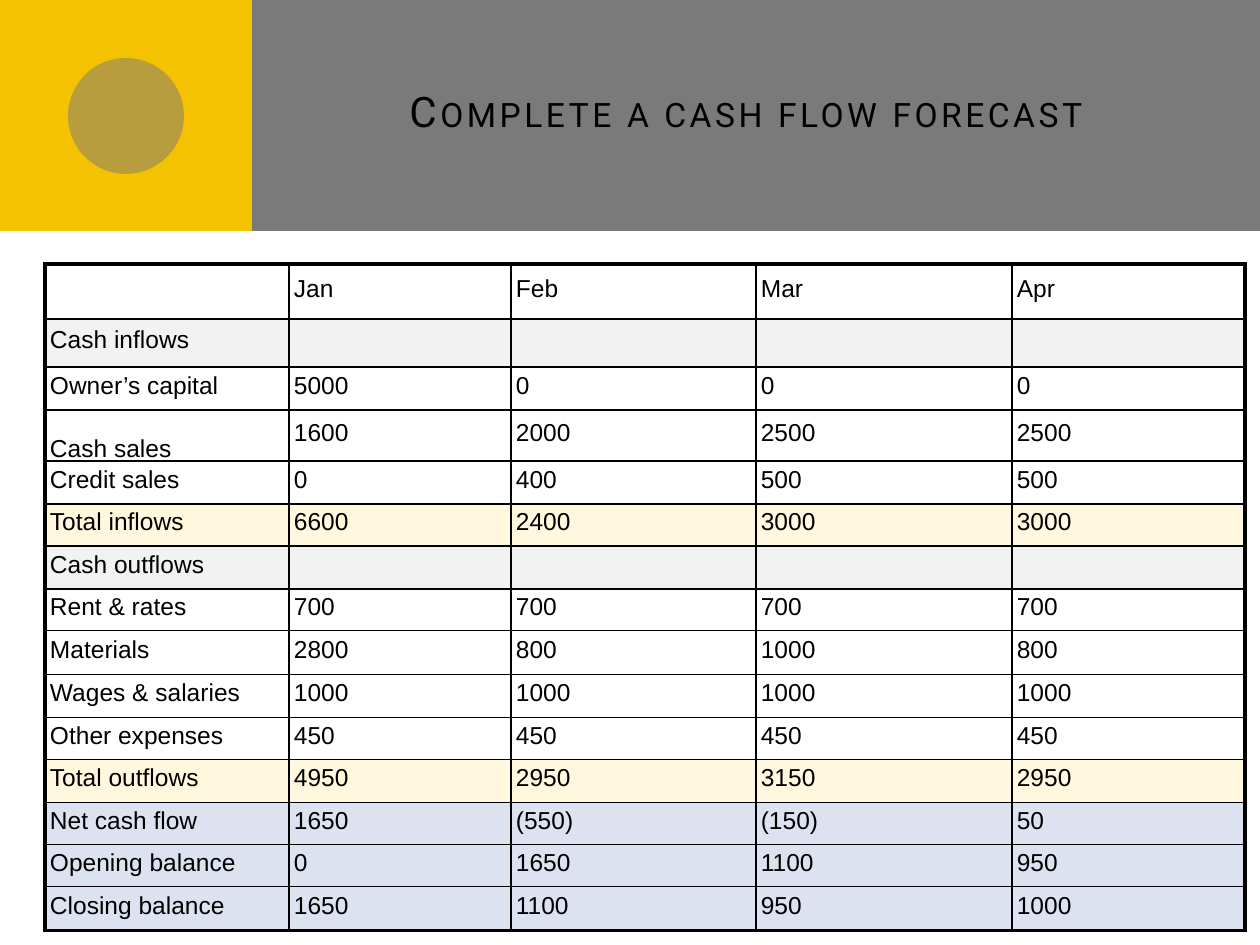
"""Build the cash flow forecast slide."""
import pptx
import pptx.dml.color
import pptx.enum.shapes
import pptx.enum.text
import pptx.oxml.ns
import pptx.util
from lxml import etree

COLORS = {
    "black": "000000",
    "grey": "7A7A7A",
    "yellow": "F5C201",
    "section": "F2F2F2",
    "total": "FFF8DF",
    "balance": "DCE2EF",
}
ROWS = [
    (55, None, ["", "Jan", "Feb", "Mar", "Apr"]),
    (48, "section", ["Cash inflows", "", "", "", ""]),
    (43, None, ["Owner’s capital", "5000", "0", "0", "0"]),
    (51, None, ["Cash sales", "1600", "2000", "2500", "2500"]),
    (43, None, ["Credit sales", "0", "400", "500", "500"]),
    (42, "total", ["Total inflows", "6600", "2400", "3000", "3000"]),
    (43, "section", ["Cash outflows", "", "", "", ""]),
    (42, None, ["Rent & rates", "700", "700", "700", "700"]),
    (44, None, ["Materials", "2800", "800", "1000", "800"]),
    (43, None, ["Wages & salaries", "1000", "1000", "1000", "1000"]),
    (42, None, ["Other expenses", "450", "450", "450", "450"]),
    (43, "total", ["Total outflows", "4950", "2950", "3150", "2950"]),
    (42, "balance", ["Net cash flow", "1650", "(550)", "(150)", "50"]),
    (42, "balance", ["Opening balance", "0", "1650", "1100", "950"]),
    (44, "balance", ["Closing balance", "1650", "1100", "950", "1000"]),
]
COLUMN_WIDTHS = [244, 222, 245, 256, 233]
SHAPES = pptx.enum.shapes.MSO_SHAPE
ANCHORS = pptx.enum.text.MSO_ANCHOR


def px(length):
    return pptx.util.Emu(round(length * 914400 / 126))


def rgb(name):
    return pptx.dml.color.RGBColor.from_string(COLORS[name])


def add_child(parent, tag, **attributes):
    return etree.SubElement(parent, pptx.oxml.ns.qn(tag), **attributes)


class SlideBuilder:
    def __init__(self, page):
        self.page = page
        self.thin, self.thick = 1, 2.25

    def shape(self, kind, left, top, width, height, color, opacity=100):
        shape = self.page.shapes.add_shape(kind, px(left), px(top), px(width), px(height))
        shape.shadow.inherit = False
        shape.line.fill.background()
        shape.fill.solid()
        shape.fill.fore_color.rgb = rgb(color)
        if opacity < 100:
            tint = shape._element.spPr.find(".//" + pptx.oxml.ns.qn("a:srgbClr"))
            add_child(tint, "a:alpha", val=str(opacity * 1000))

    def style(self, span, font, size):
        span.font.name = font
        span.font.size = pptx.util.Pt(size)
        span.font.color.rgb = rgb("black")

    def title(self, text, left, top, width, height):
        box = self.page.shapes.add_textbox(px(left), px(top), px(width), px(height))
        frame = box.text_frame
        frame.word_wrap = True
        frame.vertical_anchor = ANCHORS.MIDDLE
        frame.text = text
        para = frame.paragraphs[0]
        para.alignment = pptx.enum.text.PP_ALIGN.RIGHT
        span = para.runs[0]
        self.style(span, "Roboto", 24)
        properties = span._r.get_or_add_rPr()
        properties.set("cap", "small")
        properties.set("spc", "200")

    def borders(self, cell, outer):
        properties = cell._tc.get_or_add_tcPr()
        for side in "LRTB":
            width = self.thick if side in outer else self.thin
            line = add_child(properties, f"a:ln{side}", w=str(pptx.util.Pt(width)))
            fill = add_child(line, "a:solidFill")
            add_child(fill, "a:srgbClr", val=COLORS["black"])

    def cell(self, cell, text, color, outer, anchor):
        self.borders(cell, outer)
        if color:
            cell.fill.solid()
            cell.fill.fore_color.rgb = rgb(color)
        else:
            cell.fill.background()
        cell.margin_left = px(5)
        cell.margin_top = cell.margin_right = cell.margin_bottom = 0
        cell.vertical_anchor = anchor
        cell.text_frame.text = text
        para = cell.text_frame.paragraphs[0]
        para.line_spacing = 0.7
        para.space_before = pptx.util.Pt(2.8)
        for span in para.runs:
            self.style(span, "Arial", 14)

    def table(self, left, top, widths, rows):
        height = sum(row[0] for row in rows)
        frame = self.page.shapes.add_table(
            len(rows), len(widths), px(left), px(top), px(sum(widths)), px(height))
        table = frame.table
        table.first_row = table.horz_banding = False
        for column, width in zip(table.columns, widths):
            column.width = px(width)
        last_row, last_column = len(rows) - 1, len(widths) - 1
        for r, (row_height, color, texts) in enumerate(rows):
            table.rows[r].height = px(row_height)
            for c, text in enumerate(texts):
                edges = {"L": c == 0, "R": c == last_column, "T": r == 0, "B": r == last_row}
                outer = [side for side, on_edge in edges.items() if on_edge]
                anchor = ANCHORS.BOTTOM if text == "Cash sales" else ANCHORS.MIDDLE
                self.cell(table.cell(r, c), text, color, outer, anchor)


def main():
    deck = pptx.Presentation()
    deck.slide_width, deck.slide_height = px(1260), px(945)
    builder = SlideBuilder(deck.slides.add_slide(deck.slide_layouts[6]))
    builder.shape(SHAPES.RECTANGLE, 0, 0, 1260, 231, "grey")
    builder.shape(SHAPES.RECTANGLE, 0, 0, 252, 231, "yellow")
    builder.shape(SHAPES.OVAL, 68, 58, 116, 116, "grey", opacity=50)
    builder.title("Complete a cash flow forecast", 336, 32, 861, 158)
    builder.table(45, 264, COLUMN_WIDTHS, ROWS)
    deck.save("out.pptx")


if __name__ == "__main__":
    main()
